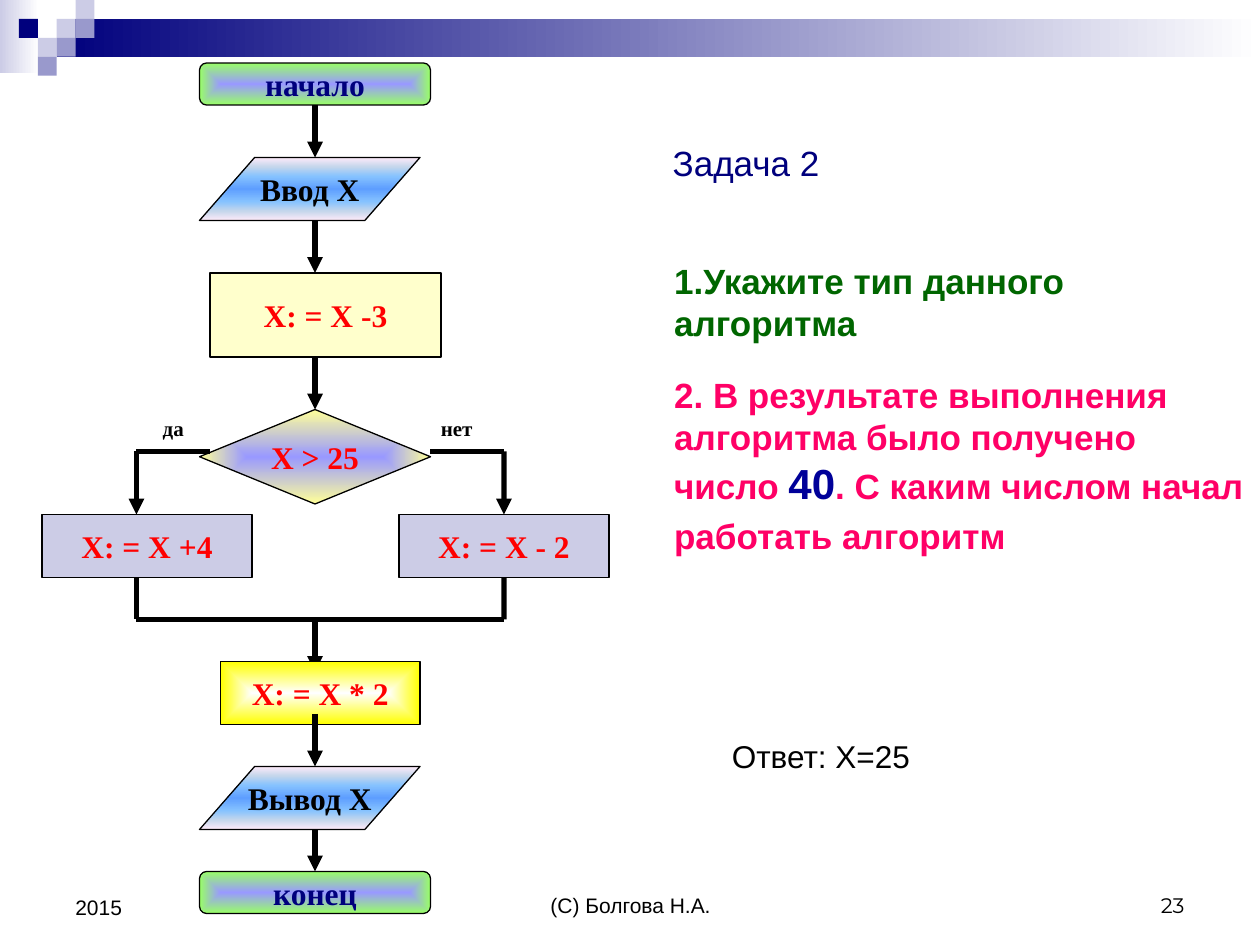
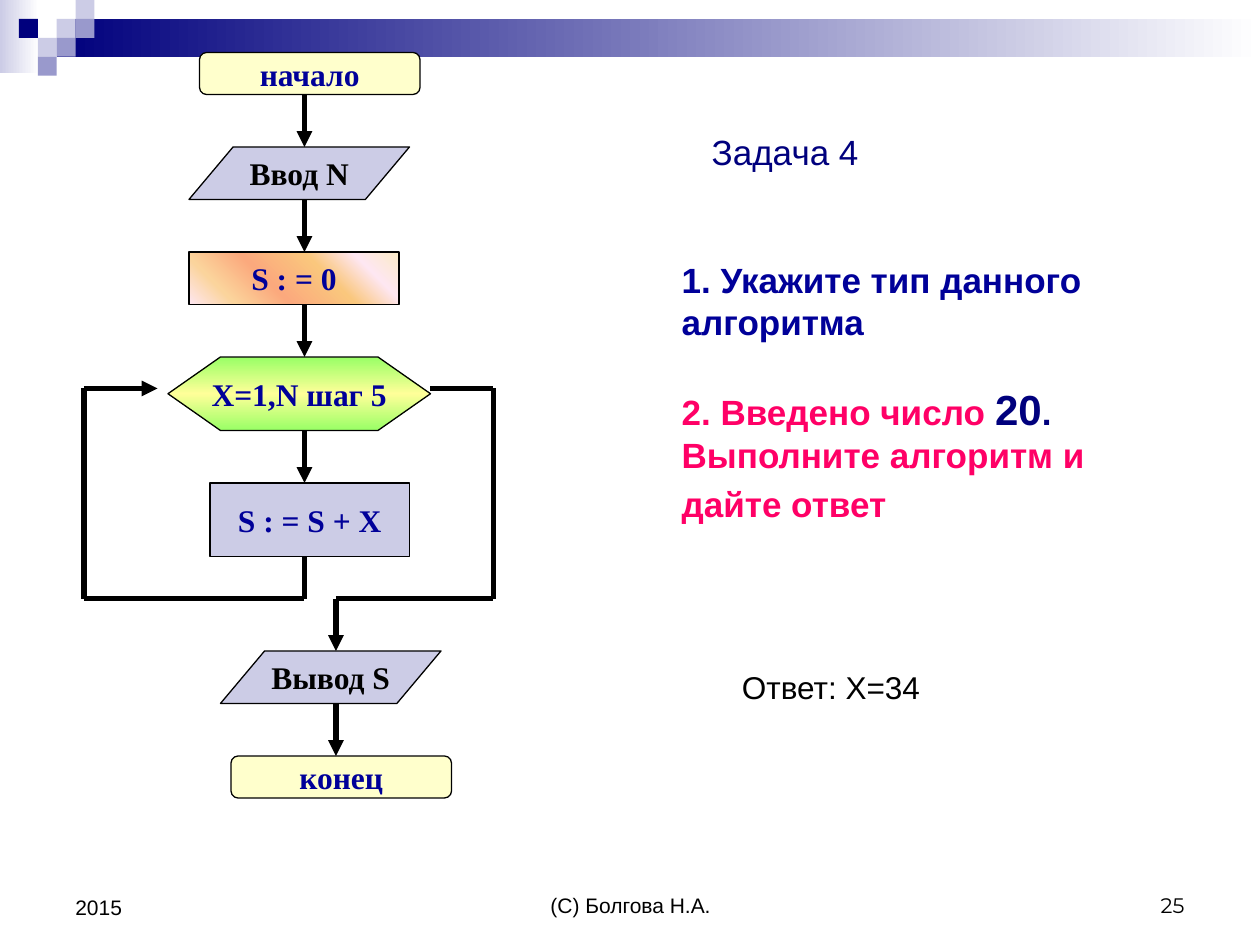
"""Build two flowchart task slides that share one band, footer and text style."""
import dataclasses
import typing

import lxml.etree
import pptx
import pptx.dml.color
import pptx.enum.shapes
import pptx.enum.text
import pptx.oxml.ns
import pptx.util

Inches = pptx.util.Inches
Kind = pptx.enum.shapes.MSO_SHAPE
Align = pptx.enum.text.PP_ALIGN
Anchor = pptx.enum.text.MSO_ANCHOR
Fit = pptx.enum.text.MSO_AUTO_SIZE
qn = pptx.oxml.ns.qn


class Grad(typing.NamedTuple):
    stops: tuple[tuple[int, str], ...]
    angle: int | None = None


Fill = str | Grad


@dataclasses.dataclass(frozen=True)
class Theme:
    sans: str = "Arial"
    serif: str = "Times New Roman"
    digit: str = "Montserrat"
    black: str = "000000"
    navy: str = "00007D"
    blue: str = "000099"
    red: str = "FF0000"
    pink: str = "FF0066"
    green: str = "006600"
    cream: str = "FFFFCC"
    light: str = "CCCCE6"
    mid: str = "9999CC"
    small: int = 12
    text: int = 18
    head: int = 20
    large: int = 24
    thin: float = 0.75
    thick: float = 3
    fade: Grad = Grad(((0, "CCCCE6"), (100, "FFFFFF")), 0)
    band: Grad = Grad(((0, "00007D"), (100, "FFFFFF")), 0)
    cap: Grad = Grad(((0, "9999FF"), (100, "99FF66")))
    sky: Grad = Grad(((0, "5E9EFF"), (40, "85C2FF"), (70, "C4D6EB"), (100, "FFEBFA")))
    test: Grad = Grad(((0, "9999FF"), (100, "FFFF99")))
    glow: Grad = Grad(((0, "FFFFFF"), (100, "FFFF00")))
    peach: Grad = Grad(((0, "FEE7F2"), (18, "FBD49C"), (39, "FBA97D"),
                        (64, "FAC77D"), (82, "FEE7F2"), (100, "FBEAC7")), 315)
    lime: Grad = Grad(((0, "99FF66"), (50, "FFFF99"), (100, "99FF66")), 90)


T = Theme()


class Run(typing.NamedTuple):
    text: str
    color: str = T.black
    size: int = T.text
    font: str = T.sans
    bold: bool = False


class Rect(typing.NamedTuple):
    left: float
    top: float
    width: float
    height: float


class Box(typing.NamedTuple):
    kind: Kind
    cells: Rect
    fill: Fill
    text: str
    color: str
    slant: float | None = None


class Link(typing.NamedTuple):
    start: tuple[int, int]
    end: tuple[int, int]
    arrow: bool = True
    under: bool = False


class Note(typing.NamedTuple):
    rect: Rect
    run: Run
    align: Align = Align.LEFT
    anchor: Anchor = Anchor.TOP
    grow: bool = True


class Page(typing.NamedTuple):
    number: int
    title: Rect
    gap: int
    foot: float
    tasks: tuple[tuple[Run, ...], ...]
    boxes: tuple[Box, ...]
    links: tuple[Link, ...]
    notes: tuple[Note, ...]


def scale(rect: Rect, unit: float = 1) -> list[pptx.util.Length]:
    return [Inches(side * unit) for side in rect]


def cell(count: float) -> pptx.util.Length:
    return Inches(count / 12)


def tint(color: str) -> pptx.dml.color.RGBColor:
    return pptx.dml.color.RGBColor.from_string(color)


def paint(shape, fill: Fill) -> None:
    shape.shadow.inherit = False
    if isinstance(fill, str):
        shape.fill.solid()
        shape.fill.fore_color.rgb = tint(fill)
        return
    sub = lxml.etree.SubElement
    node = lxml.etree.Element(qn("a:gradFill"), rotWithShape="1")
    stops = sub(node, qn("a:gsLst"))
    for pos, color in fill.stops:
        stop = sub(stops, qn("a:gs"), pos=str(pos * 1000))
        sub(stop, qn("a:srgbClr"), val=color)
    if fill.angle is None:
        way = sub(node, qn("a:path"), path="shape")
        sub(way, qn("a:fillToRect"), dict.fromkeys("ltrb", "50000"))
    else:
        sub(node, qn("a:lin"), ang=str(fill.angle * 60000), scaled="1")
    shape.element.spPr.insert(2, node)


def write(par, runs: typing.Iterable[Run], align: Align = Align.LEFT) -> None:
    par.alignment = align
    for item in runs:
        run = par.add_run()
        run.text = item.text
        run.font.name = item.font
        run.font.size = pptx.util.Pt(item.size)
        run.font.bold = item.bold
        run.font.color.rgb = tint(item.color)


def draw_band(slide, layout) -> None:
    tiles = ((3, 1, T.light), (4, 0, T.light), (4, 1, T.mid), (2, 2, T.light),
             (1, 1, T.navy), (3, 2, T.mid), (2, 3, T.mid))
    side = 0.15
    parts = [(Rect(0, 0, 0.31, 0.58), T.fade), (Rect(0.45, side, 9.55, 0.3), T.band)]
    parts += [(Rect(col * side, row * side, side, side), fill) for col, row, fill in tiles]
    for index, (rect, fill) in enumerate(parts):
        shape = slide.shapes.add_shape(Kind.RECTANGLE, *scale(rect))
        paint(shape, fill)
        shape.line.fill.background()
        shape.element.nvSpPr.cNvPr.set("id", str(100 + index))
        layout.shapes.element.append(shape.element)


def draw_note(slide, note: Note) -> None:
    frame = slide.shapes.add_textbox(*scale(note.rect)).text_frame
    frame.word_wrap = True
    frame.auto_size = Fit.SHAPE_TO_FIT_TEXT if note.grow else Fit.NONE
    frame.vertical_anchor = note.anchor
    write(frame.paragraphs[0], [note.run], note.align)


def draw_box(slide, box: Box):
    shape = slide.shapes.add_shape(box.kind, *scale(box.cells, 1 / 12))
    if box.slant is not None:
        shape.adjustments[0] = box.slant
    paint(shape, box.fill)
    shape.line.color.rgb = tint(T.black)
    shape.line.width = pptx.util.Pt(T.thin)
    frame = shape.text_frame
    frame.word_wrap = False
    frame.vertical_anchor = Anchor.MIDDLE
    run = Run(box.text, box.color, T.text, T.serif, True)
    write(frame.paragraphs[0], [run], Align.CENTER)
    return shape


def find_sites(box: Box) -> list[tuple[float, float]]:
    left, top, width, height = box.cells
    x, y = left + width / 2, top + height / 2
    return [(x, top), (left, y), (x, top + height), (left + width, y)]


def draw_link(slide, link: Link, joints: dict) -> None:
    ends = [cell(value) for value in link.start + link.end]
    line = slide.shapes.add_connector(pptx.enum.shapes.MSO_CONNECTOR.STRAIGHT, *ends)
    line.line.color.rgb = tint(T.black)
    line.line.width = pptx.util.Pt(T.thick)
    if link.arrow:
        lxml.etree.SubElement(line.line._get_or_add_ln(), qn("a:tailEnd"), type="triangle")
    lxml.etree.SubElement(line.element.spPr, qn("a:effectLst"))
    if link.start in joints:
        line.begin_connect(*joints[link.start])
    if link.end in joints:
        line.end_connect(*joints[link.end])


def draw_title(slide, page: Page) -> None:
    title = slide.shapes.title
    title.left, title.top, title.width, title.height = scale(page.title)
    frame = title.text_frame
    frame.auto_size = Fit.NONE
    frame.word_wrap = True
    frame.vertical_anchor = Anchor.MIDDLE
    frame.margin_bottom = Inches(page.foot)
    first, second = frame.paragraphs[0], frame.add_paragraph()
    second.space_before = pptx.util.Pt(page.gap)
    for par, runs in zip((first, second), page.tasks):
        write(par, runs)


def draw_page(slide, page: Page) -> None:
    draw_title(slide, page)
    for link in page.links:
        if link.under:
            draw_link(slide, link, {})
    joints = {}
    for box in page.boxes:
        shape = draw_box(slide, box)
        joints |= {spot: (shape, site) for site, spot in enumerate(find_sites(box))}
    for link in page.links:
        if not link.under:
            draw_link(slide, link, joints)
    feet = ((Rect(3.42, 6.83, 3.17, 0.5), "(С) Болгова Н.А.", T.sans, Align.CENTER),
            (Rect(7.17, 6.83, 2.33, 0.5), str(page.number), T.digit, Align.RIGHT),
            (Rect(0.5, 6.83, 2.33, 0.52), "2015", T.sans, Align.LEFT))
    for rect, text, font, align in feet:
        run = Run(text, size=T.small, font=font)
        draw_note(slide, Note(rect, run, align, Anchor.BOTTOM, False))
    for note in page.notes:
        draw_note(slide, note)


def head(text: str, color: str, size: int = T.head) -> Run:
    return Run(text, color, size, bold=True)


def sign(left: float, text: str) -> Note:
    return Note(Rect(left, 3.25, 0.75, 0.3), Run(text, T.black, T.small, T.serif, True), Align.CENTER)


CAP, DATA, STEP = Kind.FLOWCHART_ALTERNATE_PROCESS, Kind.FLOWCHART_DATA, Kind.RECTANGLE

BRANCH = Page(
    23, Rect(5.25, 3, 4.75, 1.25), 17, 0.81,
    ((head("1.Укажите тип данного алгоритма", T.green),),
     (head("2. В результате выполнения алгоритма было получено число ", T.pink),
      head("40", T.blue, T.large), head(". С каким числом начал работать алгоритм", T.pink),
      head(" ", T.pink, T.large))),
    (Box(CAP, Rect(19, 6, 22, 4), T.cap, "начало", T.navy),
     Box(Kind.PARALLELOGRAM, Rect(19, 15, 21, 6), T.sky, "Ввод Х", T.black, 0.875),
     Box(STEP, Rect(20, 26, 22, 8), T.cream, "Х: = Х -3", T.red),
     Box(Kind.DIAMOND, Rect(19, 39, 22, 9), T.test, "Х > 25", T.red),
     Box(STEP, Rect(4, 49, 20, 6), T.light, "Х: = Х +4", T.red),
     Box(STEP, Rect(38, 49, 20, 6), T.light, "Х: = Х - 2", T.red),
     Box(STEP, Rect(21, 63, 19, 6), T.glow, "Х: = Х * 2", T.red),
     Box(Kind.PARALLELOGRAM, Rect(19, 73, 21, 6), T.sky, "Вывод Х", T.black, 0.875),
     Box(CAP, Rect(19, 83, 22, 4), T.cap, "конец", T.navy)),
    (Link((30, 10), (30, 15)), Link((30, 21), (30, 26)), Link((30, 34), (30, 39)),
     Link((13, 43), (20, 43), False), Link((41, 43), (48, 43), False),
     Link((13, 43), (13, 49)), Link((48, 43), (48, 49)),
     Link((13, 55), (13, 59), False), Link((48, 55), (48, 59), False),
     Link((13, 59), (48, 59), False), Link((30, 59), (30, 64), under=True),
     Link((30, 68), (30, 73)), Link((30, 79), (30, 83))),
    (sign(1, "да"), sign(3.25, "нет"),
     Note(Rect(5.71, 5.8, 2.91, 0.4), Run("Ответ: Х=25")),
     Note(Rect(5.24, 1.07, 1.81, 0.43), Run("Задача 2", T.navy, T.head))))

LOOP = Page(
    25, Rect(5.31, 2.49, 3.92, 1.25), 23, 0.05,
    ((head("1. Укажите тип данного алгоритма", T.blue),),
     (head("2. Введено число ", T.pink), head("20", T.navy, T.large), head(".", T.navy),
      head(" Выполните алгоритм и дайте ответ", T.pink), head(" ", T.pink, T.large))),
    (Box(CAP, Rect(19, 5, 21, 4), T.cream, "начало", T.blue),
     Box(DATA, Rect(18, 14, 21, 5), T.light, "Ввод N", T.black),
     Box(STEP, Rect(18, 24, 20, 5), T.peach, "S : = 0", T.blue),
     Box(Kind.FLOWCHART_PREPARATION, Rect(16, 34, 25, 7), T.lime, "X=1,N шаг 5", T.blue),
     Box(STEP, Rect(20, 46, 19, 7), T.light, "S : = S + X", T.blue),
     Box(DATA, Rect(21, 62, 21, 5), T.light, "Вывод S", T.black),
     Box(CAP, Rect(22, 72, 21, 4), T.cream, "конец", T.blue)),
    (Link((29, 9), (29, 14)), Link((29, 19), (29, 24)), Link((29, 29), (29, 34)),
     Link((29, 41), (29, 46)), Link((29, 53), (29, 57), False),
     Link((8, 57), (29, 57), False), Link((8, 37), (8, 57), False), Link((8, 37), (15, 37)),
     Link((41, 37), (47, 37), False), Link((47, 37), (47, 57), False),
     Link((32, 57), (47, 57), False), Link((32, 57), (32, 62)), Link((32, 67), (32, 72))),
    (Note(Rect(5.55, 0.99, 1.81, 0.43), Run("Задача 4", T.navy, T.head)),
     Note(Rect(5.79, 5.25, 2.91, 0.4), Run("Ответ: Х=34"))))


def main() -> None:
    deck = pptx.Presentation()
    deck.slide_width, deck.slide_height = Inches(10), Inches(7.5)
    layout = deck.slide_layouts[5]
    slides = [deck.slides.add_slide(layout) for _ in range(2)]
    draw_band(slides[0], layout)
    for slide, page in zip(slides, (BRANCH, LOOP)):
        draw_page(slide, page)
    deck.save("out.pptx")


if __name__ == "__main__":
    main()
